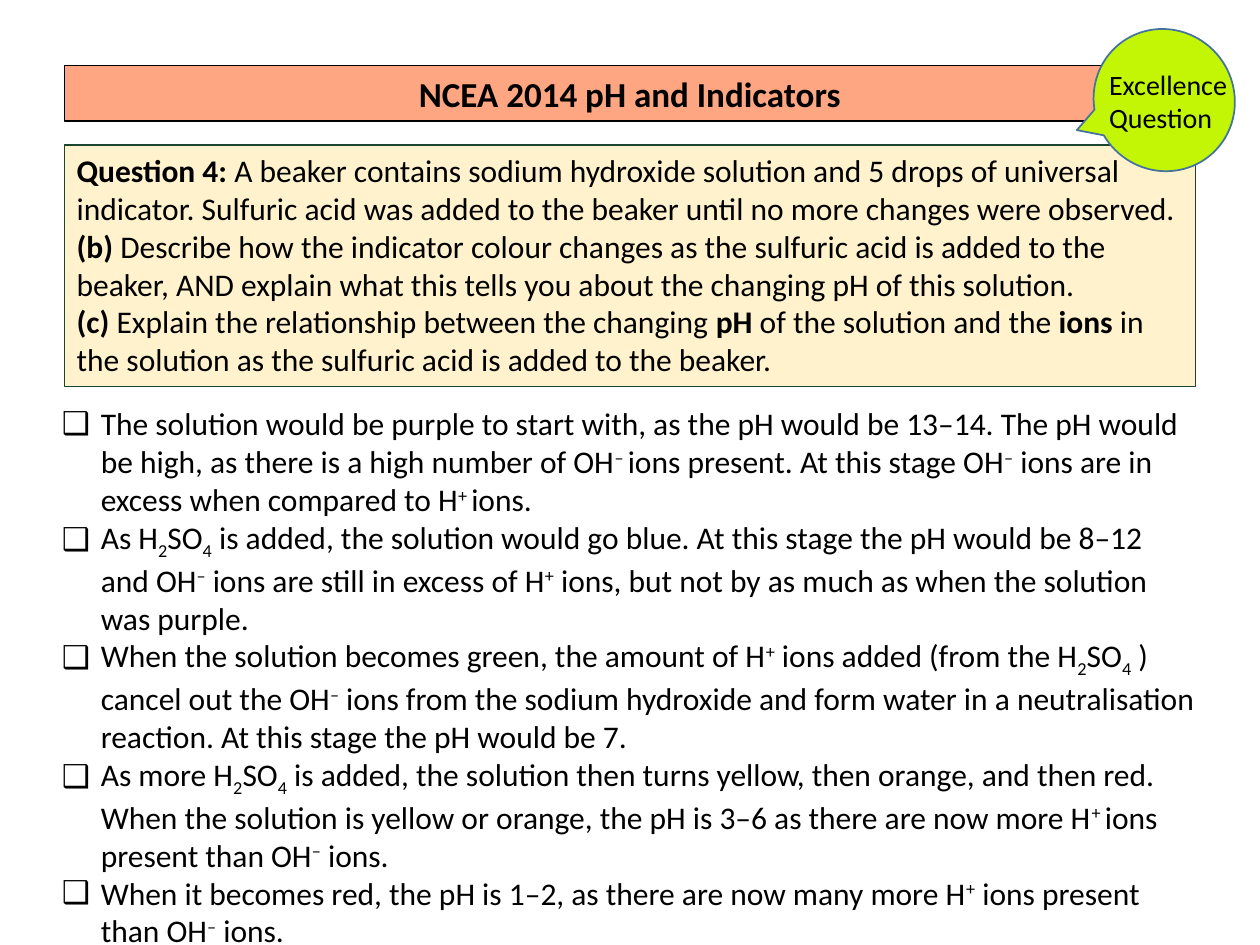
import lxml.etree
import pptx
import pptx.dml.color
import pptx.enum.shapes
import pptx.enum.text
import pptx.oxml.ns
import pptx.util

COLUMNS, ROWS = 100, 75
WIDTH, HEIGHT = pptx.util.Inches(10), pptx.util.Inches(7.5)
FONT = "Calibri"
COLORS = {
    "ink": "000000",
    "banner": "FEA582",
    "panel": "FFF2CC",
    "panel_edge": "1B452F",
    "bubble": "C2F604",
    "bubble_edge": "43739E",
}
BASELINES = {"^": "30000", "_": "-25000"}
TITLE = "NCEA 2014 pH and Indicators"
QUESTION = [
    "*Question 4: |A beaker contains sodium hydroxide solution and 5 drops of universal "
    "indicator. Sulfuric acid was added to the beaker until no more changes were observed.",
    "*(b) |Describe how the indicator colour changes as the sulfuric acid is added to the "
    "beaker, AND explain what this tells you about the changing pH of this solution.",
    "*(c) |Explain the relationship between the changing |*pH |of the solution and the |"
    "*ions |in the solution as the sulfuric acid is added to the beaker.",
]
ANSWERS = [
    "The solution would be purple to start with, as the pH would be 13–14. The pH would "
    "be high, as there is a high number of OH|^– |ions present. At this stage OH|^–| ions "
    "are in excess when compared to H|^+ |ions.",
    "As H|_2|SO|_4| is added, the solution would go blue. At this stage the pH would be "
    "8–12 and OH|^–| ions are still in excess of H|^+| ions, but not by as much as when "
    "the solution was purple.",
    "When the solution becomes green, the amount of H|^+| ions added (from the H|_2|SO|_4"
    "| ) cancel out the OH|^–| ions from the sodium hydroxide and form water in a "
    "neutralisation reaction. At this stage the pH would be 7.",
    "As more H|_2|SO|_4| is added, the solution then turns yellow, then orange, and then "
    "red. When the solution is yellow or orange, the pH is 3–6 as there are now more H|"
    "^+ |ions present than OH|^–| ions.",
    "When it becomes red, the pH is 1–2, as there are now many more H|^+| ions present "
    "than OH|^–| ions.",
]


def grid_box(left, top, width, height):
    """Convert grid columns and rows to slide lengths."""
    column, row = WIDTH / COLUMNS, HEIGHT / ROWS
    return int(left * column), int(top * row), int(width * column), int(height * row)


def place(shape, box):
    """Move a shape to the given box."""
    shape.left, shape.top, shape.width, shape.height = box


def color(name):
    """Look up a named colour."""
    return pptx.dml.color.RGBColor.from_string(COLORS[name])


def paint(shape, fill, edge, weight):
    """Fill and outline a shape."""
    shape.fill.solid()
    shape.fill.fore_color.rgb = color(fill)
    shape.line.color.rgb = color(edge)
    shape.line.width = pptx.util.Pt(weight)


def write(shape, lines, size, align=pptx.enum.text.PP_ALIGN.LEFT):
    """Write lines whose spans may be marked bold (*), raised (^) or lowered (_)."""
    frame = shape.text_frame
    frame.word_wrap = True
    frame.auto_size = pptx.enum.text.MSO_AUTO_SIZE.NONE
    for index, line in enumerate(lines):
        para = frame.paragraphs[0] if index == 0 else frame.add_paragraph()
        para.alignment = align
        para.space_before = pptx.util.Pt(0)
        for part in line.split("|"):
            mark = part[0] if part[0] in "*^_" else ""
            span = para.add_run()
            span.text = part[len(mark):]
            span.font.name = FONT
            span.font.size = pptx.util.Pt(size)
            span.font.bold = mark == "*"
            span.font.color.rgb = color("ink")
            if mark in BASELINES:
                span.font._element.set("baseline", BASELINES[mark])


def add_bullet(para, indent):
    """Give a paragraph a hanging box bullet."""
    settings = para._p.get_or_add_pPr()
    settings.set("marL", str(indent))
    settings.set("indent", str(-indent))
    for tag, key, value in (("a:buFont", "typeface", "Arial"), ("a:buChar", "char", "❑")):
        lxml.etree.SubElement(settings, pptx.oxml.ns.qn(tag)).set(key, value)


def fill_banner(page, box):
    """Style the title placeholder as a banner."""
    banner = page.shapes.title
    place(banner, box)
    paint(banner, "banner", "ink", 0.75)
    write(banner, ["*" + TITLE], 20, pptx.enum.text.PP_ALIGN.CENTER)


def add_question(page, box):
    """Add the question panel."""
    panel = page.shapes.add_shape(pptx.enum.shapes.MSO_SHAPE.RECTANGLE, *box)
    panel.shadow.inherit = False
    paint(panel, "panel", "panel_edge", 0.75)
    panel.text_frame.vertical_anchor = pptx.enum.text.MSO_ANCHOR.TOP
    write(panel, QUESTION, 18)


def fill_answers(page, box):
    """Fill the body placeholder with the bulleted answers."""
    body = page.placeholders[1]
    place(body, box)
    write(body, ANSWERS, 18)
    for para in body.text_frame.paragraphs:
        add_bullet(para, grid_box(3.1, 0, 0, 0)[0])


def add_badge(page, box):
    """Add the speech bubble and its label."""
    left, top, width, height = box
    bubble = page.shapes.add_shape(pptx.enum.shapes.MSO_SHAPE.OVAL_CALLOUT, *box)
    bubble.shadow.inherit = False
    bubble.rotation = 52.1
    paint(bubble, "bubble", "bubble_edge", 1)
    label = page.shapes.add_textbox(
        int(left + width * 0.03), int(top + height * 0.22), int(width * 1.1), int(height * 0.58)
    )
    write(label, ["Excellence", "Question"], 16)


def main():
    """Build the slide and save it."""
    deck = pptx.Presentation()
    deck.slide_width, deck.slide_height = WIDTH, HEIGHT
    page = deck.slides.add_slide(deck.slide_layouts[1])
    fill_banner(page, grid_box(5.1, 5.2, 89.8, 4.4))
    add_question(page, grid_box(5.1, 11.5, 89.8, 19.2))
    fill_answers(page, grid_box(3.9, 31.6, 92.1, 43.4))
    add_badge(page, grid_box(86.7, 2.4, 11.4, 11.1))
    deck.save("out.pptx")


if __name__ == "__main__":
    main()
